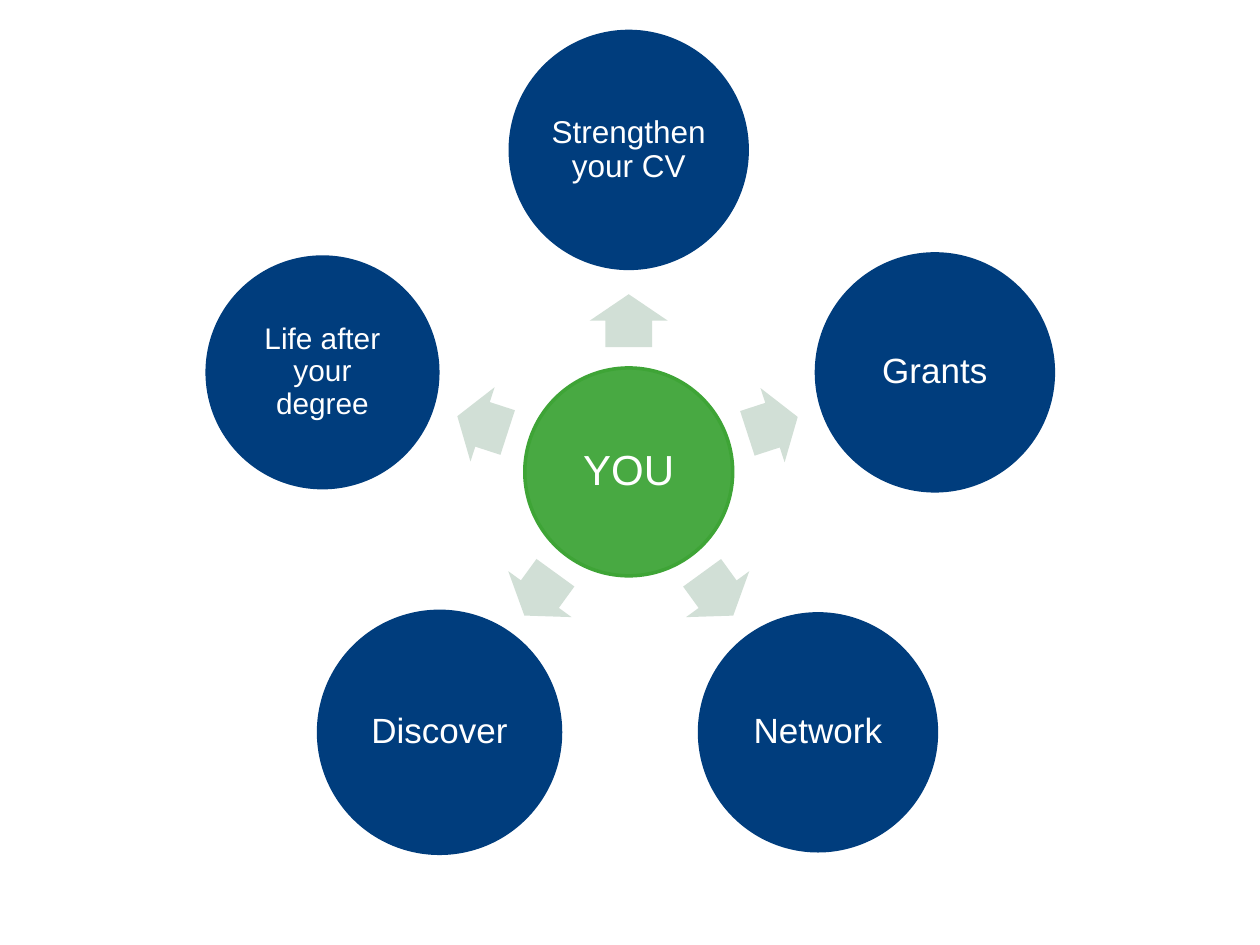
from math import cos, radians, sin

from pptx import Presentation
from pptx.dml.color import RGBColor
from pptx.enum.shapes import MSO_SHAPE as Shape
from pptx.enum.text import MSO_ANCHOR as Anchor, PP_ALIGN as Align
from pptx.util import Inches, Pt

COLORS = {
    "hub": "48A942",
    "hub line": "3EA436",
    "spoke": "003D7D",
    "arrow": "D1DFD6",
    "text": "FFFFFF",
}
FONT = "Arial"
CENTER_X, CENTER_Y = 4.99, 3.745
SPOKE_RADIUS = 2.555
ARROW_LENGTH, ARROW_WIDTH = 0.42, 0.62

# label, diameter, font size, distance of the arrow from the center
SPOKES = [
    ("Strengthen your CV", 1.88, 18, 1.2),
    ("Grants", 1.88, 20, 1.2),
    ("Network", 1.88, 20, 1.2),
    ("Discover", 1.92, 20, 1.2),
    ("Life after your degree", 1.83, 17, 1.22),
]

presentation = Presentation()
presentation.slide_width = Inches(10)
presentation.slide_height = Inches(7.5)
slide = presentation.slides.add_slide(presentation.slide_layouts[6])


def add_centered(kind, radius, angle, width, height, fill):
    """Add a shape whose middle lies at a polar position around the hub."""
    left = CENTER_X + radius * cos(radians(angle)) - width / 2
    top = CENTER_Y + radius * sin(radians(angle)) - height / 2
    shape = slide.shapes.add_shape(
        kind, Inches(left), Inches(top), Inches(width), Inches(height))
    shape.shadow.inherit = False
    shape.fill.solid()
    shape.fill.fore_color.rgb = RGBColor.from_string(COLORS[fill])
    return shape


def add_circle(label, radius, angle, diameter, size, fill, line):
    circle = add_centered(Shape.OVAL, radius, angle, diameter, diameter, fill)
    circle.line.color.rgb = RGBColor.from_string(COLORS[line])
    circle.line.width = Pt(2)
    frame = circle.text_frame
    frame.word_wrap = True
    frame.vertical_anchor = Anchor.MIDDLE
    frame.margin_left = frame.margin_right = Inches(0.03)
    frame.margin_top = frame.margin_bottom = Inches(0.03)
    paragraph = frame.paragraphs[0]
    paragraph.alignment = Align.CENTER
    paragraph.line_spacing = 0.9
    run = paragraph.add_run()
    run.text = label
    run.font.name = FONT
    run.font.size = Pt(size)
    run.font.color.rgb = RGBColor.from_string(COLORS["text"])


add_circle("YOU", 0, 0, 1.65, 24, "hub", "hub line")

for index, (label, diameter, size, arrow_radius) in enumerate(SPOKES):
    angle = -90 + index * 360 / len(SPOKES)
    arrow = add_centered(
        Shape.RIGHT_ARROW, arrow_radius, angle, ARROW_LENGTH, ARROW_WIDTH, "arrow")
    arrow.line.fill.background()
    arrow.adjustments[0] = 0.6
    arrow.adjustments[1] = 0.5
    arrow.rotation = angle % 360
    add_circle(label, SPOKE_RADIUS, angle, diameter, size, "spoke", "spoke")

presentation.save("out.pptx")
